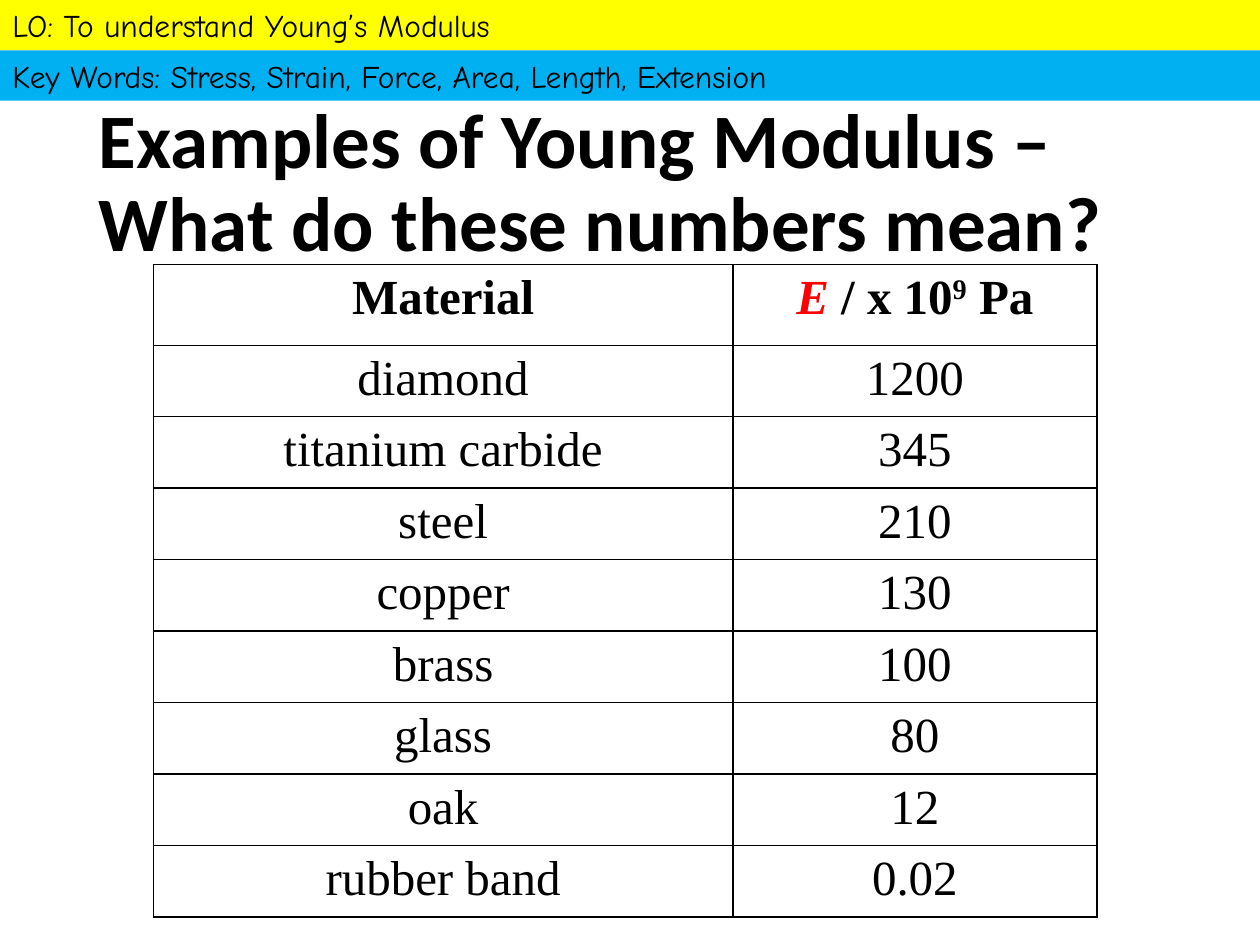
from typing import NamedTuple

from lxml import etree
from pptx import Presentation
from pptx import util as u
from pptx.dml.color import RGBColor
from pptx.enum import shapes, text
from pptx.oxml import ns

BLACK = RGBColor(0, 0, 0)
RED = RGBColor(255, 0, 0)
YELLOW = RGBColor(255, 255, 0)
BLUE = RGBColor(0, 176, 240)
PAGE_WIDTH = 720
BAND_HEIGHT = 28.8
HEADER_HEIGHT = 46.3
ROW_HEIGHT = 40.8
COLUMN_WIDTHS = (331.2, 208)


class Band(NamedTuple):
    wording: str
    color: RGBColor


class Material(NamedTuple):
    name: str
    modulus: str


class Piece(NamedTuple):
    wording: str
    color: RGBColor = BLACK
    italic: bool = False
    raised: bool = False


BANDS = (
    Band("LO: To understand Young’s Modulus", YELLOW),
    Band("Key Words: Stress, Strain, Force, Area, Length, Extension", BLUE),
)
MATERIALS = (
    Material("diamond", "1200"),
    Material("titanium carbide", "345"),
    Material("steel", "210"),
    Material("copper", "130"),
    Material("brass", "100"),
    Material("glass", "80"),
    Material("oak", "12"),
    Material("rubber band", "0.02"),
)
HEADERS = (
    (Piece("Material"),),
    (Piece("E", RED, italic=True), Piece(" / x 10"), Piece("9", raised=True), Piece(" Pa")),
)


def set_font(para, name: str, size: float, bold: bool = False) -> None:
    para.font.name = name
    para.font.size = u.Pt(size)
    para.font.bold = bold
    para.font.color.rgb = BLACK


def draw_band(page, band: Band, top: float) -> None:
    box = page.shapes.add_shape(
        shapes.MSO_SHAPE.RECTANGLE, 0, u.Pt(top), u.Pt(PAGE_WIDTH), u.Pt(BAND_HEIGHT)
    )
    box.shadow.inherit = False
    box.fill.solid()
    box.fill.fore_color.rgb = band.color
    box.line.fill.background()
    frame = box.text_frame
    frame.word_wrap = True
    frame.auto_size = text.MSO_AUTO_SIZE.SHAPE_TO_FIT_TEXT
    frame.vertical_anchor = text.MSO_ANCHOR.TOP
    para = frame.paragraphs[0]
    para.text = band.wording
    para.alignment = text.PP_ALIGN.LEFT
    set_font(para, "Comic Neue", 18)


def draw_title(page, wording: str) -> None:
    box = page.shapes.add_textbox(u.Pt(49.5), u.Pt(53.3), u.Pt(621), u.Pt(104.4))
    frame = box.text_frame
    frame.word_wrap = True
    frame.vertical_anchor = text.MSO_ANCHOR.MIDDLE
    para = frame.paragraphs[0]
    para.text = wording
    para.line_spacing = 0.9
    set_font(para, "Calibri", 44, bold=True)


def add_borders(cell) -> None:
    properties = cell._tc.get_or_add_tcPr()
    for side in ("a:lnL", "a:lnR", "a:lnT", "a:lnB"):
        line = etree.SubElement(properties, ns.qn(side), w=str(u.Pt(1)))
        fill = etree.SubElement(line, ns.qn("a:solidFill"))
        etree.SubElement(fill, ns.qn("a:srgbClr"), val=str(BLACK))


def fill_cell(cell, pieces: tuple[Piece, ...], bold: bool) -> None:
    add_borders(cell)
    cell.fill.background()
    para = cell.text_frame.paragraphs[0]
    para.alignment = text.PP_ALIGN.CENTER
    set_font(para, "Times New Roman", 28, bold)
    for piece in pieces:
        span = para.add_run()
        span.text = piece.wording
        span.font.color.rgb = piece.color
        if piece.italic:
            span.font.italic = True
        if piece.raised:
            span.font._element.set("baseline", "30000")


def draw_table(page) -> None:
    rows = [HEADERS] + [
        tuple((Piece(wording),) for wording in material) for material in MATERIALS
    ]
    table = page.shapes.add_table(
        len(rows), len(COLUMN_WIDTHS), u.Pt(87.6), u.Pt(151),
        u.Pt(sum(COLUMN_WIDTHS)), u.Pt(HEADER_HEIGHT + ROW_HEIGHT * len(MATERIALS)),
    ).table
    table.first_row = False
    table.horz_banding = False
    for column, width in zip(table.columns, COLUMN_WIDTHS):
        column.width = u.Pt(width)
    for index, row in enumerate(rows):
        is_header = index == 0
        table.rows[index].height = u.Pt(HEADER_HEIGHT if is_header else ROW_HEIGHT)
        for cell, pieces in zip(table.rows[index].cells, row):
            fill_cell(cell, pieces, bold=is_header)


def main() -> None:
    deck = Presentation()
    deck.slide_width = u.Pt(PAGE_WIDTH)
    deck.slide_height = u.Pt(540)
    page = deck.slides.add_slide(deck.slide_layouts[6])
    for index, band in enumerate(BANDS):
        draw_band(page, band, index * BAND_HEIGHT)
    draw_title(page, "Examples of Young Modulus – What do these numbers mean?")
    draw_table(page)
    deck.save("out.pptx")


if __name__ == "__main__":
    main()
